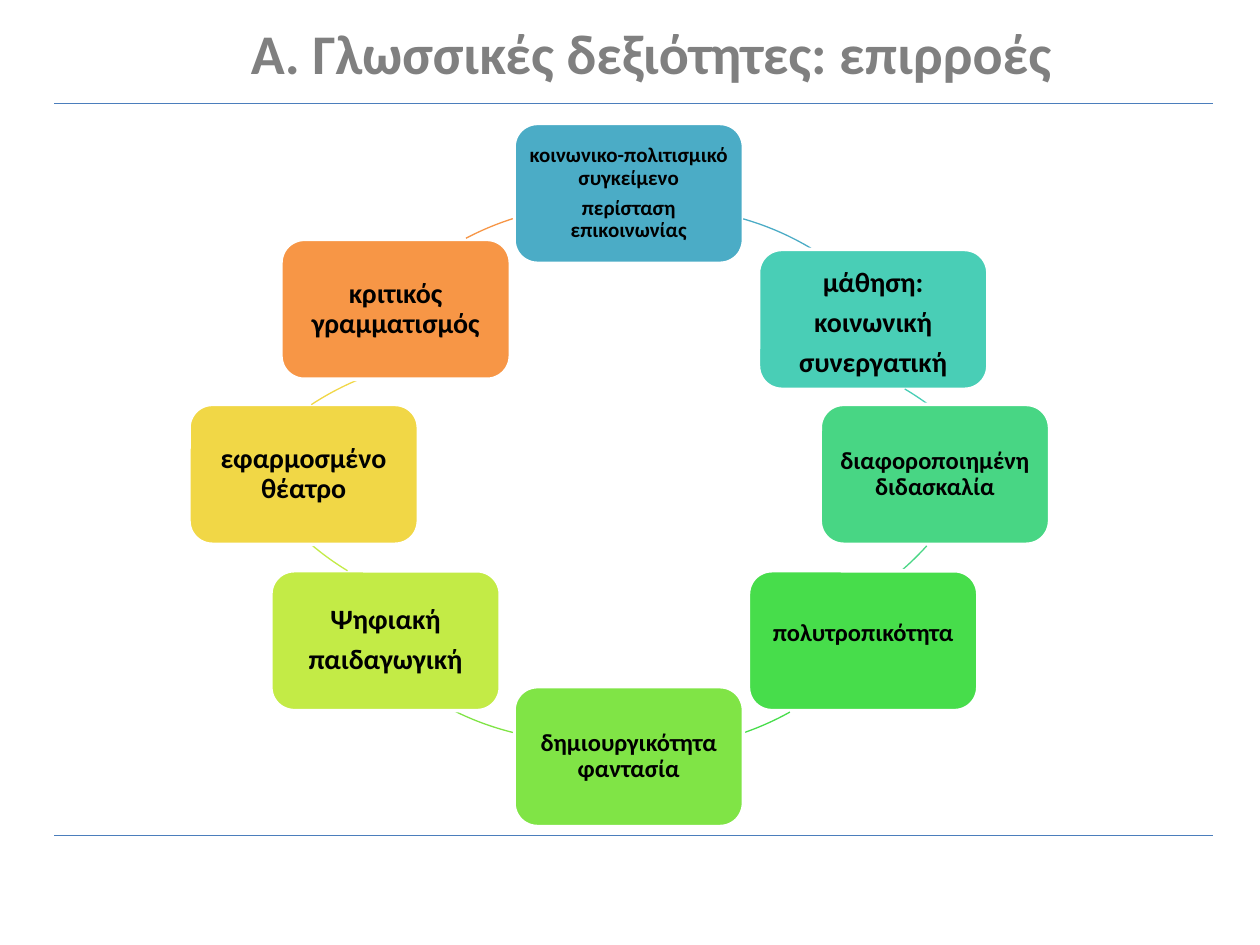
from lxml import etree
from pptx import Presentation
from pptx.dml.color import RGBColor
from pptx.enum.shapes import MSO_CONNECTOR, MSO_SHAPE
from pptx.enum.text import MSO_ANCHOR, MSO_AUTO_SIZE, PP_ALIGN
from pptx.oxml.ns import qn
from pptx.util import Inches, Pt

ROUNDED, ARC = MSO_SHAPE.ROUNDED_RECTANGLE, MSO_SHAPE.ARC
STRAIGHT = MSO_CONNECTOR.STRAIGHT
MIDDLE, NO_FIT = MSO_ANCHOR.MIDDLE, MSO_AUTO_SIZE.NONE
LEFT, CENTER = PP_ALIGN.LEFT, PP_ALIGN.CENTER

BOX_W, BOX_H, RING = 1.82, 1.11, 4.53
TITLE = "Α. Γλωσσικές δεξιότητες: επιρροές"
RULES = [0.82, 6.63]

FACTORS = [
    ((4.08, 0.98), "4BACC6", 12,
     ["κοινωνικο-πολιτισμικό συγκείμενο", "περίσταση επικοινωνίας"], (0, 0)),
    ((6.02, 1.98), "49CEB6", 16, ["μάθηση:", "κοινωνική", "συνεργατική"], (0.07, 0)),
    ((6.51, 3.21), "48D684", 14, ["διαφοροποιημένη διδασκαλία"], (0, 0)),
    ((5.94, 4.53), "47DD4B", 14, ["πολυτροπικότητα"], (0, 0.12)),
    ((4.08, 5.45), "80E446", 14, ["δημιουργικότητα φαντασία"], (0, 0)),
    ((2.15, 4.53), "C3EB46", 16, ["Ψηφιακή", "παιδαγωγική"], (0, 0)),
    ((1.5, 3.21), "F1D746", 16, ["εφαρμοσμένο θέατρο"], (0, 0)),
    ((2.23, 1.9), "F79646", 16, ["κριτικός γραμματισμός"], (0, 0)),
]
ARCS = [
    ((3.01, 1.65), 286, 300.9),
    ((3.76, 2.77), 300.7, 306.2),
    ((3.41, 0.55), 42.1, 49.5),
    ((2.9, 1.41), 60.8, 71),
    ((2.35, 1.35), 103.9, 116.3),
    ((1.67, 0.33), 121.3, 130),
    ((1.45, 2.84), 236.7, 247.6),
    ((2.49, 1.63), 242.2, 252.4),
]


def rgb(value):
    """Turn a hex string into a colour."""
    return RGBColor.from_string(value)


class SlideBuilder:
    """Hold the style and the current slide."""

    font = {"name": "Calibri", "bold": True}

    def __init__(self, slide):
        """Keep the slide to draw on."""
        self.slide = slide

    def text(self, tf, lines, size, color, align, **frame):
        """Fill a text frame with one paragraph per line."""
        settings = {"word_wrap": True, "auto_size": NO_FIT,
                    "vertical_anchor": MIDDLE, **frame}
        for name, value in settings.items():
            setattr(tf, name, value)
        for i, line in enumerate(lines):
            p = tf.add_paragraph() if i else tf.paragraphs[0]
            p.alignment = align
            p.line_spacing = 0.9
            p.space_before = Pt(0)
            p.space_after = Pt(round(0.35 * size, 1))
            r = p.add_run()
            r.text = line
            for name, value in {**self.font, "size": Pt(size)}.items():
                setattr(r.font, name, value)
            r.font.color.rgb = rgb(color)

    def title(self, text):
        """Place and format the title."""
        sp = self.slide.shapes.title
        box = {"left": 1.89, "top": 0.29, "width": 8.11, "height": 0.32}
        for name, value in box.items():
            setattr(sp, name, Inches(value))
        self.text(sp.text_frame, [text], 32, "808080", LEFT)

    def rule(self, y):
        """Draw a horizontal rule across the slide."""
        line = self.slide.shapes.add_connector(
            STRAIGHT, Inches(0.43), Inches(y), Inches(9.63), Inches(y))
        line.line.color.rgb = rgb("4B7EBC")
        line.line.width = Pt(0.75)
        etree.SubElement(line._element.spPr, qn("a:effectLst"))

    def shape(self, kind, at, width, height, color, weight):
        """Add a preset shape with an outline and no shadow."""
        sp = self.slide.shapes.add_shape(
            kind, Inches(at[0]), Inches(at[1]), Inches(width), Inches(height))
        sp.shadow.inherit = False
        sp.line.color.rgb = rgb(color)
        sp.line.width = Pt(weight)
        return sp

    def factor(self, at, color, size, lines, extra):
        """Add a rounded box with its label and extra top and bottom insets."""
        sp = self.shape(ROUNDED, at, BOX_W, BOX_H, "FFFFFF", 2)
        sp.fill.solid()
        sp.fill.fore_color.rgb = rgb(color)
        top, bottom = extra
        self.text(sp.text_frame, lines, size, "000000", CENTER,
                  margin_left=Inches(0.05), margin_right=Inches(0.05),
                  margin_top=Inches(0.05 + top), margin_bottom=Inches(0.05 + bottom))

    def arc(self, at, start, end, color):
        """Draw a clockwise arc between two angles in degrees."""
        sp = self.shape(ARC, at, RING, RING, color, 0.75)
        sp.fill.background()
        for i, angle in enumerate((start, end)):
            sp.adjustments[i] = angle * 0.6


def main():
    """Build the slide and save it."""
    prs = Presentation()
    prs.slide_width, prs.slide_height = Inches(10), Inches(7.5)
    s = SlideBuilder(prs.slides.add_slide(prs.slide_layouts[5]))
    for y in RULES:
        s.rule(y)
    for factor, (at, start, end) in zip(FACTORS, ARCS):
        s.factor(*factor)
        s.arc(at, start, end, factor[1])
    s.title(TITLE)
    prs.save("out.pptx")


if __name__ == "__main__":
    main()
